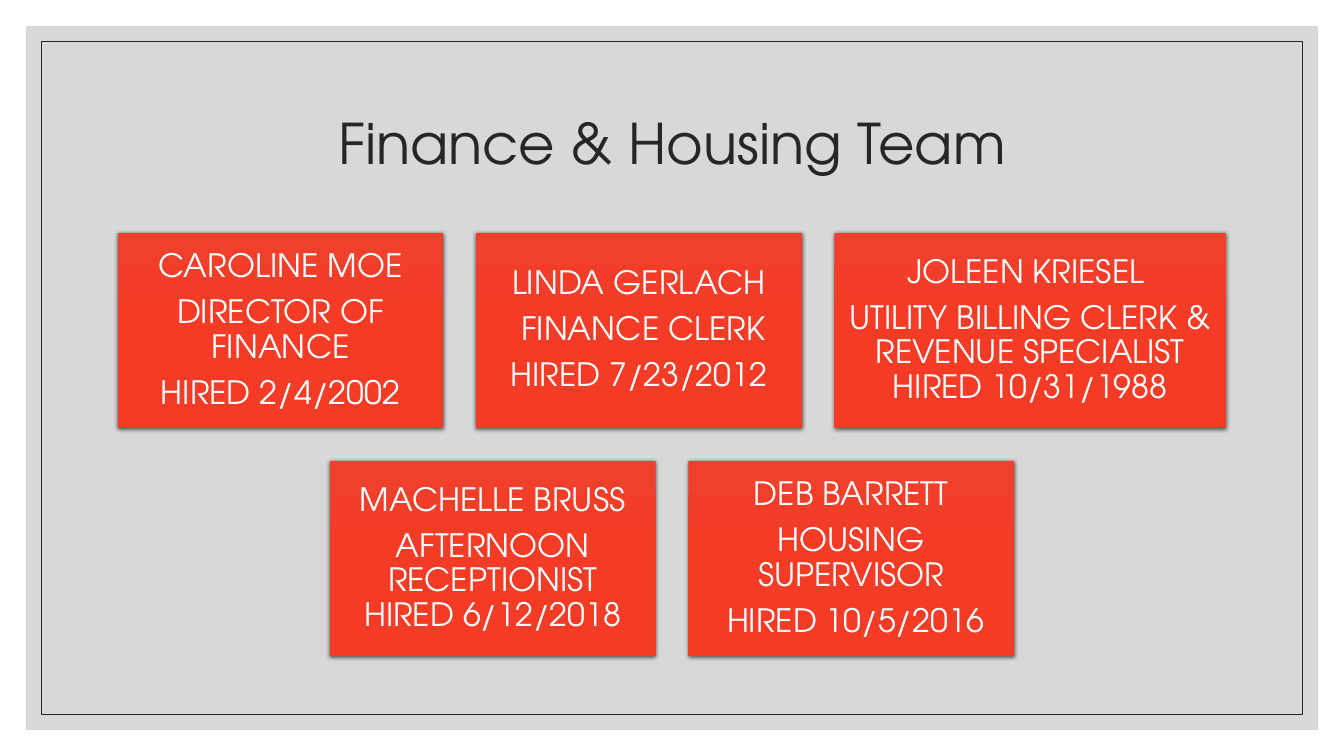
from lxml.etree import SubElement
from pptx import Presentation
from pptx.dml.color import RGBColor
from pptx.enum.shapes import MSO_SHAPE
from pptx.enum.text import MSO_ANCHOR, MSO_AUTO_SIZE, PP_ALIGN
from pptx.oxml.ns import qn
from pptx.util import Pt

COLORS = {
    "panel": "BFBFBF",
    "ink": "262626",
    "card_top": "F03F2B",
    "card_base": "F43B26",
    "card_text": "FFFFFF",
    "shadow": "000000",
}
SLIDE_WIDTH, SLIDE_HEIGHT = 960, 540
CARD_WIDTH, WIDE_CARD_WIDTH, CARD_HEIGHT, GAP = 232.8, 280, 139.7, 23.2
FIRST_ROW_TOP = 166.2

TEAM_ROWS = [
    [
        (CARD_WIDTH, ["CAROLINE MOE", "DIRECTOR OF FINANCE", "HIRED 2/4/2002"]),
        (CARD_WIDTH, ["LINDA GERLACH", " FINANCE CLERK", "HIRED 7/23/2012"]),
        (WIDE_CARD_WIDTH, ["JOLEEN KRIESEL ", "UTILITY BILLING CLERK & REVENUE SPECIALIST HIRED 10/31/1988"]),
    ],
    [
        (CARD_WIDTH, ["MACHELLE BRUSS", "AFTERNOON RECEPTIONIST HIRED 6/12/2018"]),
        (CARD_WIDTH, ["DEB BARRETT", "HOUSING SUPERVISOR", " HIRED 10/5/2016"]),
    ],
]


def apply_format(target, values):
    for name, value in values.items():
        setattr(target, name, value)


def color(name):
    return RGBColor.from_string(COLORS[name])


class TeamSlide:
    font_name = "TeX Gyre Adventor"
    frame_format = {
        "word_wrap": True,
        "auto_size": MSO_AUTO_SIZE.NONE,
        "vertical_anchor": MSO_ANCHOR.MIDDLE,
        "margin_left": Pt(7.2),
        "margin_right": Pt(7.2),
        "margin_top": Pt(7.2),
        "margin_bottom": Pt(7.2),
    }

    def __init__(self, presentation):
        self.slide = presentation.slides.add_slide(presentation.slide_layouts[5])

    def rectangle(self, left, top, width, height):
        shape = self.slide.shapes.add_shape(
            MSO_SHAPE.RECTANGLE, Pt(left), Pt(top), Pt(width), Pt(height)
        )
        shape.shadow.inherit = False
        return shape

    def set_text(self, shape, lines, size, color_name, space_after):
        frame = shape.text_frame
        frame.text = "\n".join(lines)
        apply_format(frame, self.frame_format)
        for paragraph in frame.paragraphs:
            apply_format(paragraph, {
                "alignment": PP_ALIGN.CENTER,
                "line_spacing": 0.9,
                "space_before": Pt(0),
                "space_after": Pt(space_after),
            })
            apply_format(paragraph.font, {"name": self.font_name, "size": Pt(size)})
            paragraph.font.color.rgb = color(color_name)

    def panel(self, margin):
        shape = self.rectangle(margin, margin, SLIDE_WIDTH - 2 * margin, SLIDE_HEIGHT - 2 * margin)
        shape.fill.solid()
        shape.fill.fore_color.rgb = color("panel")
        shape.line.fill.background()
        fill_color = shape.element.spPr.find(".//" + qn("a:srgbClr"))
        SubElement(fill_color, qn("a:alpha"), val="60000")

    def border(self, margin):
        shape = self.rectangle(margin, margin, SLIDE_WIDTH - 2 * margin, SLIDE_HEIGHT - 2 * margin)
        shape.fill.background()
        shape.line.color.rgb = color("ink")
        shape.line.width = Pt(0.5)

    def title(self, text):
        title = self.slide.shapes.title
        apply_format(title, {"left": Pt(84), "top": Pt(50.4), "width": Pt(792), "height": Pt(108)})
        self.set_text(title, [text], 40, "ink", 0)
        self.slide.shapes.element.append(title.element)

    def card(self, left, top, width, lines):
        shape = self.rectangle(left, top, width, CARD_HEIGHT)
        shape.fill.gradient()
        shape.fill.gradient_angle = 270
        stops = zip(shape.fill.gradient_stops, [(0, "card_top"), (0.5, "card_base")])
        for stop, (position, color_name) in stops:
            stop.position = position
            stop.color.rgb = color(color_name)
        shape.line.fill.background()
        self.card_shadow(shape)
        self.set_text(shape, lines, 23, "card_text", 8.05)

    def card_shadow(self, shape):
        effects = shape.element.spPr.find(qn("a:effectLst"))
        shadow = SubElement(
            effects, qn("a:outerShdw"),
            blurRad=str(Pt(3)), dist=str(Pt(1)), dir="5400000", rotWithShape="0",
        )
        shadow_color = SubElement(shadow, qn("a:srgbClr"), val=COLORS["shadow"])
        SubElement(shadow_color, qn("a:alpha"), val="63000")

    def card_row(self, top, cards):
        row_width = sum(width for width, lines in cards) + GAP * (len(cards) - 1)
        left = (SLIDE_WIDTH - row_width) / 2
        for width, lines in cards:
            self.card(left, top, width, lines)
            left += width + GAP


def main():
    presentation = Presentation()
    apply_format(presentation, {"slide_width": Pt(SLIDE_WIDTH), "slide_height": Pt(SLIDE_HEIGHT)})
    team_slide = TeamSlide(presentation)
    team_slide.panel(18.7)
    team_slide.border(29.5)
    team_slide.title("Finance & Housing Team")
    for index, cards in enumerate(TEAM_ROWS):
        team_slide.card_row(FIRST_ROW_TOP + index * (CARD_HEIGHT + GAP), cards)
    presentation.save("out.pptx")


if __name__ == "__main__":
    main()
